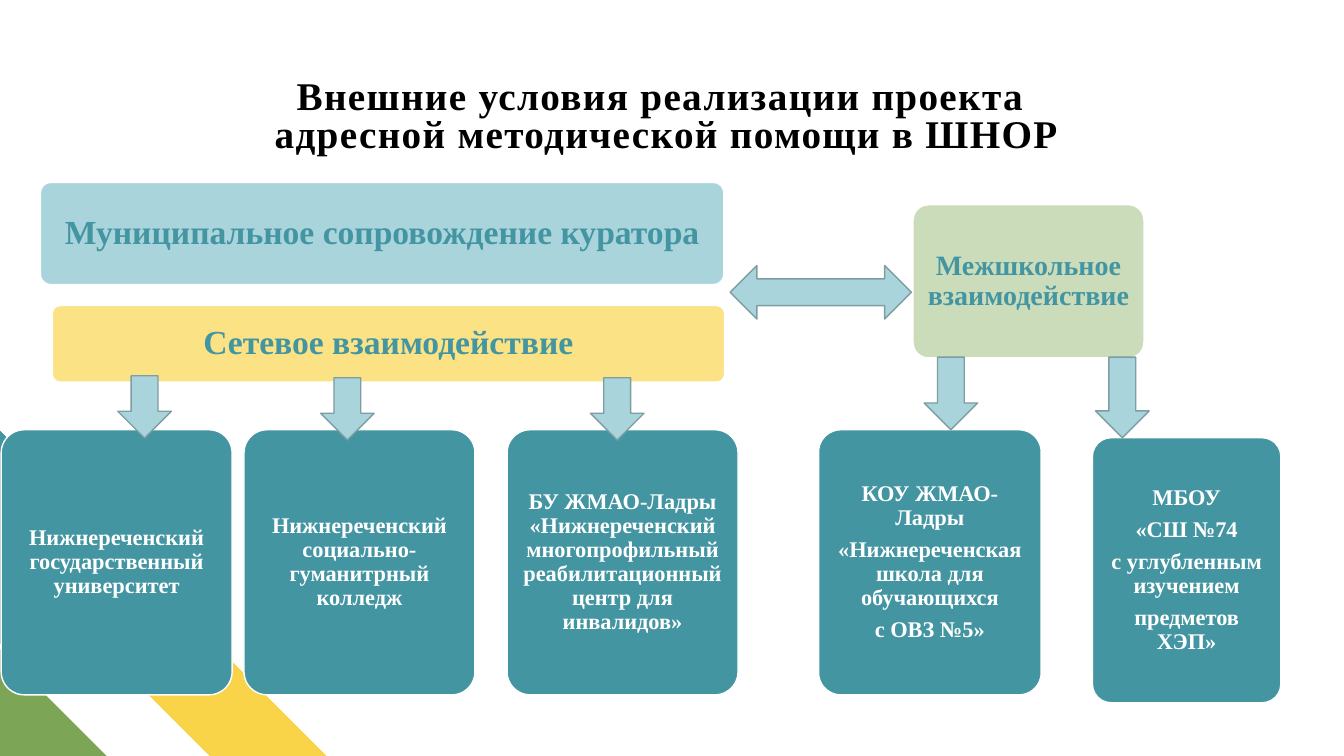
import pptx
import pptx.util
from pptx.dml.color import RGBColor
from pptx.enum.shapes import MSO_SHAPE
from pptx.enum.text import MSO_ANCHOR, PP_ALIGN
from pptx.util import Cm

FONT = "Times New Roman"
BLACK = RGBColor(0x00, 0x00, 0x00)
WHITE = RGBColor(0xFF, 0xFF, 0xFF)
TEAL = RGBColor(0x44, 0x95, 0xA2)
LIGHT_TEAL = RGBColor(0xA9, 0xD4, 0xDB)
GREY_TEAL = RGBColor(0x7D, 0x9D, 0xA2)
YELLOW = RGBColor(0xF9, 0xD4, 0x48)
LIGHT_YELLOW = RGBColor(0xFB, 0xE2, 0x84)
GREEN = RGBColor(0x7C, 0xA6, 0x55)
LIGHT_GREEN = RGBColor(0xCB, 0xDC, 0xBA)

# Corner bands: colour and corner points in cm
BANDS = [
    (YELLOW, [(8.23, 19.05), (5.46, 19.05), (2.69, 16.28), (4.09, 14.91)]),
    (GREEN, [(2.69, 19.05), (0, 19.05), (0, 16.36)]),
    (TEAL, [(0, 10.85), (2.69, 13.54), (0, 16.23)]),
]
BAND_SHIFTS = (0, -0.18)

# Headings: left, top, width, height in cm, fill, text size, text
HEADINGS = [
    (1.02, 4.6, 17.22, 2.57, LIGHT_TEAL, 24, "Муниципальное сопровождение куратора"),
    (1.32, 7.7, 16.94, 1.93, LIGHT_YELLOW, 24, "Сетевое взаимодействие"),
    (23.01, 5.16, 5.82, 3.86, LIGHT_GREEN, 20, "Межшкольное взаимодействие"),
]

# Partners: left, top, width in cm, paragraphs
PARTNER_HEIGHT = 6.68
PARTNERS = [
    (0.03, 10.83, 5.82, ["Нижнереченский государственный университет"]),
    (6.15, 10.83, 5.82, ["Нижнереченский социально-гуманитрный колледж"]),
    (12.78, 10.83, 5.82, ["БУ ЖМАО-Ладры «Нижнереченский многопрофильный "
                          "реабилитационный центр для инвалидов»"]),
    (20.63, 10.83, 5.61, ["КОУ ЖМАО-Ладры",
                          "«Нижнереченская школа для обучающихся",
                          "с ОВЗ №5»"]),
    (27.53, 11.03, 4.75, ["МБОУ", "«СШ №74", "с углубленным изучением",
                          "предметов ХЭП»"]),
]

# Down arrows: left, top, height in cm
ARROW_WIDTH = 1.35
DOWN_ARROWS = [
    (2.97, 9.47, 1.57),
    (8.08, 9.52, 1.57),
    (14.88, 9.52, 1.57),
    (27.61, 9, 2.03),
    (23.29, 9, 1.83),
]


def paint(shape, fill, line=None):
    shape.shadow.inherit = False
    shape.fill.solid()
    shape.fill.fore_color.rgb = fill
    if line is None:
        shape.line.fill.background()
    else:
        shape.line.color.rgb = line
        shape.line.width = pptx.util.Pt(1)


def add_span(para, text, size, color):
    span = para.add_run()
    span.text = text
    span.font.name = FONT
    span.font.size = pptx.util.Pt(size)
    span.font.bold = True
    span.font.color.rgb = color
    return span


def set_margins(frame, margin):
    frame.margin_left = frame.margin_right = margin
    frame.margin_top = frame.margin_bottom = margin


def add_band(page, color, points, shift):
    corners = [(Cm(x + shift), Cm(y)) for x, y in points]
    builder = page.shapes.build_freeform(*corners[0])
    builder.add_line_segments(corners[1:], close=True)
    paint(builder.convert_to_shape(), color)


def add_title(page, lines):
    box = page.shapes.add_textbox(Cm(1.7), Cm(1.24), Cm(30.2), Cm(2.69))
    frame = box.text_frame
    frame.word_wrap = True
    frame.vertical_anchor = MSO_ANCHOR.BOTTOM
    set_margins(frame, 0)
    para = frame.paragraphs[0]
    para.alignment = PP_ALIGN.CENTER
    para.line_spacing = 0.8
    for number, line in enumerate(lines):
        if number:
            para.add_line_break()
        span = add_span(para, line, 28, BLACK)
        span.font._element.set("spc", "100")


def add_card(page, left, top, width, height, fill, color, size, texts):
    """Rounded box whose margins and paragraph gaps follow the text size."""
    card = page.shapes.add_shape(MSO_SHAPE.ROUNDED_RECTANGLE,
                                 Cm(left), Cm(top), Cm(width), Cm(height))
    card.adjustments[0] = 0.1
    paint(card, fill, WHITE)
    frame = card.text_frame
    frame.word_wrap = True
    frame.vertical_anchor = MSO_ANCHOR.MIDDLE
    set_margins(frame, Cm(size / 95))
    for number, text in enumerate(texts):
        para = frame.add_paragraph() if number else frame.paragraphs[0]
        para.alignment = PP_ALIGN.CENTER
        para.line_spacing = 0.9
        para.space_after = pptx.util.Pt(size * 0.35)
        add_span(para, text, size, color)


def add_arrow(page, kind, left, top, width, height):
    arrow = page.shapes.add_shape(kind, Cm(left), Cm(top), Cm(width), Cm(height))
    paint(arrow, LIGHT_TEAL, GREY_TEAL)


def main():
    deck = pptx.Presentation()
    deck.slide_width, deck.slide_height = Cm(33.87), Cm(19.05)
    page = deck.slides.add_slide(deck.slide_layouts[6])

    for shift in BAND_SHIFTS:
        for color, points in BANDS:
            add_band(page, color, points, shift)
    add_title(page, ["Внешние условия реализации проекта ",
                     "адресной методической помощи в ШНОР"])
    for left, top, width, height, fill, size, text in HEADINGS:
        add_card(page, left, top, width, height, fill, TEAL, size, [text])
    for left, top, width, texts in PARTNERS:
        add_card(page, left, top, width, PARTNER_HEIGHT, TEAL, WHITE, 16, texts)
    for left, top, height in DOWN_ARROWS:
        add_arrow(page, MSO_SHAPE.DOWN_ARROW, left, top, ARROW_WIDTH, height)
    add_arrow(page, MSO_SHAPE.LEFT_RIGHT_ARROW, 18.4, 6.69, 4.57, ARROW_WIDTH)

    deck.save("out.pptx")


if __name__ == "__main__":
    main()
